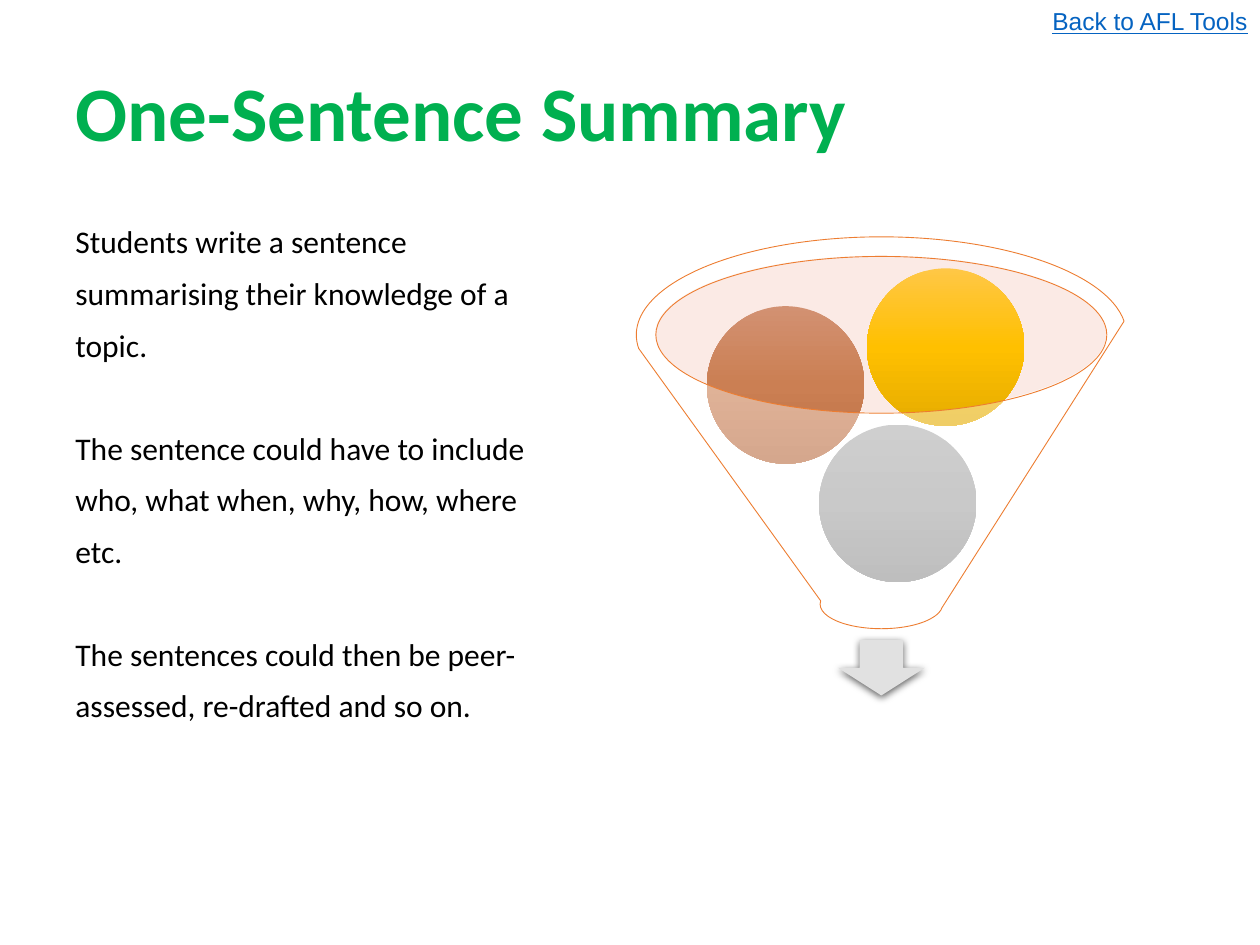
import copy

import pptx
import pptx.dml.color
import pptx.enum.shapes
import pptx.enum.text
import pptx.oxml
import pptx.oxml.ns
import pptx.util

RGB = pptx.dml.color.RGBColor
SHAPE = pptx.enum.shapes.MSO_SHAPE
ALIGN = pptx.enum.text.PP_ALIGN
GREEN = RGB(0x00, 0xB0, 0x50)
BLACK = RGB(0x00, 0x00, 0x00)
LINK_BLUE = RGB(0x05, 0x63, 0xC1)
ORANGE = RGB(0xED, 0x7D, 0x31)
WHITE = RGB(0xFF, 0xFF, 0xFF)
PINK = RGB(0xF6, 0xCC, 0xBE)
ARROW_GREY = RGB(0xE1, 0xE1, 0xE1)
GREYS = [RGB(0xAF, 0xAF, 0xAF), RGB(0xA5, 0xA5, 0xA5), RGB(0x93, 0x93, 0x93)]
BROWNS = [RGB(0xD2, 0x91, 0x72), RGB(0xCB, 0x7F, 0x53), RGB(0xBA, 0x6D, 0x41)]
GOLDS = [RGB(0xFF, 0xC7, 0x46), RGB(0xFF, 0xC0, 0x00), RGB(0xE5, 0xAC, 0x00)]

deck = pptx.Presentation()
deck.slide_width = pptx.util.Inches(10)
deck.slide_height = pptx.util.Inches(7.5)
slide = deck.slides.add_slide(deck.slide_layouts[5])
margin = 0.5


def write(paragraph, text, size, font, color):
    run = paragraph.add_run()
    run.text = text
    run.font.size = pptx.util.Pt(size)
    run.font.name = font
    run.font.color.rgb = color
    return run


def add_part(kind, left, top, width, height, color=None, alpha=100):
    part = slide.shapes.add_shape(kind, *map(pptx.util.Inches, (left, top, width, height)))
    part.shadow.inherit = False
    part.line.fill.background()
    if color is not None:
        part.fill.solid()
        part.fill.fore_color.rgb = color
    if alpha < 100:
        srgb = part._element.spPr.find(".//" + pptx.oxml.ns.qn("a:srgbClr"))
        srgb.append(pptx.oxml.parse_xml(
            f'<a:alpha {pptx.oxml.ns.nsdecls("a")} val="{alpha * 1000}"/>'))
    return part


# Title
title = slide.shapes.title
title.left, title.top = pptx.util.Inches(margin), pptx.util.Inches(0.3)
title.width, title.height = pptx.util.Inches(10 - 2 * margin), pptx.util.Inches(1.25)
title.text_frame.vertical_anchor = pptx.enum.text.MSO_ANCHOR.MIDDLE
heading = title.text_frame.paragraphs[0]
heading.alignment = ALIGN.LEFT
heading.line_spacing = 0.9
write(heading, "One-Sentence Summary", 44, "Calibri", GREEN).font.bold = True

# Instructions: three groups of lines, one line's pitch apart
steps = [
    ["Students write a sentence", "summarising their knowledge of a", "topic."],
    ["The sentence could have to include", "who, what when, why, how, where", "etc."],
    ["The sentences could then be peer-", "assessed, re-drafted and so on."],
]
instructions = slide.shapes.add_textbox(
    *map(pptx.util.Inches, (margin, 1.75, 4.42, 4.95))).text_frame
instructions.word_wrap = True
for step_no, step in enumerate(steps):
    for line_no, line in enumerate(step):
        first = step_no == line_no == 0
        paragraph = instructions.paragraphs[0] if first else instructions.add_paragraph()
        paragraph.line_spacing = 0.9
        paragraph.space_before = pptx.util.Pt(39.5 if step_no and not line_no else 10)
        write(paragraph, line, 18, "Calibri", BLACK)

# Return label in the top right corner
back_label = slide.shapes.add_textbox(*map(pptx.util.Inches, (7.97, 0, 2.03, 0.34))).text_frame
back_label.word_wrap = True
back_label.auto_size = pptx.enum.text.MSO_AUTO_SIZE.SHAPE_TO_FIT_TEXT
back_label.paragraphs[0].alignment = ALIGN.RIGHT
write(back_label.paragraphs[0], "Back to AFL Tools", 14, "Arial", LINK_BLUE).font.underline = True

# Funnel mouth and the arrow below the spout
add_part(SHAPE.OVAL, 5.2, 2.03, 3.58, 1.24, PINK, 40)
output_arrow = add_part(SHAPE.DOWN_ARROW, 6.65, 5.08, 0.69, 0.44, ARROW_GREY)
effects = output_arrow._element.spPr.find(pptx.oxml.ns.qn("a:effectLst"))
effects.append(pptx.oxml.parse_xml(
    f'<a:outerShdw {pptx.oxml.ns.nsdecls("a")} blurRad="57150" dist="19050" dir="5400000"'
    ' algn="ctr" rotWithShape="0"><a:srgbClr val="000000"><a:alpha val="63000"/>'
    '</a:srgbClr></a:outerShdw>'))

# Balls, each shaded from top to bottom
for left, top, shades in [(6.5, 3.37, GREYS), (5.61, 2.43, BROWNS), (6.88, 2.13, GOLDS)]:
    ball = add_part(SHAPE.OVAL, left, top, 1.25, 1.25)
    ball.fill.gradient()
    ball.fill.gradient_angle = 270
    stop_list = ball._element.spPr.find(".//" + pptx.oxml.ns.qn("a:gsLst"))
    stop_list.append(copy.deepcopy(stop_list[-1]))
    for stop, position, shade in zip(ball.fill.gradient_stops, (0, 0.5, 1), shades):
        stop.position = position
        stop.color.rgb = shade

# Funnel in front of the balls
funnel = add_part(SHAPE.FUNNEL, 5.05, 1.88, 3.89, 3.11, WHITE, 40)
funnel.line.color.rgb = ORANGE
funnel.line.width = pptx.util.Pt(0.5)

deck.save("out.pptx")
